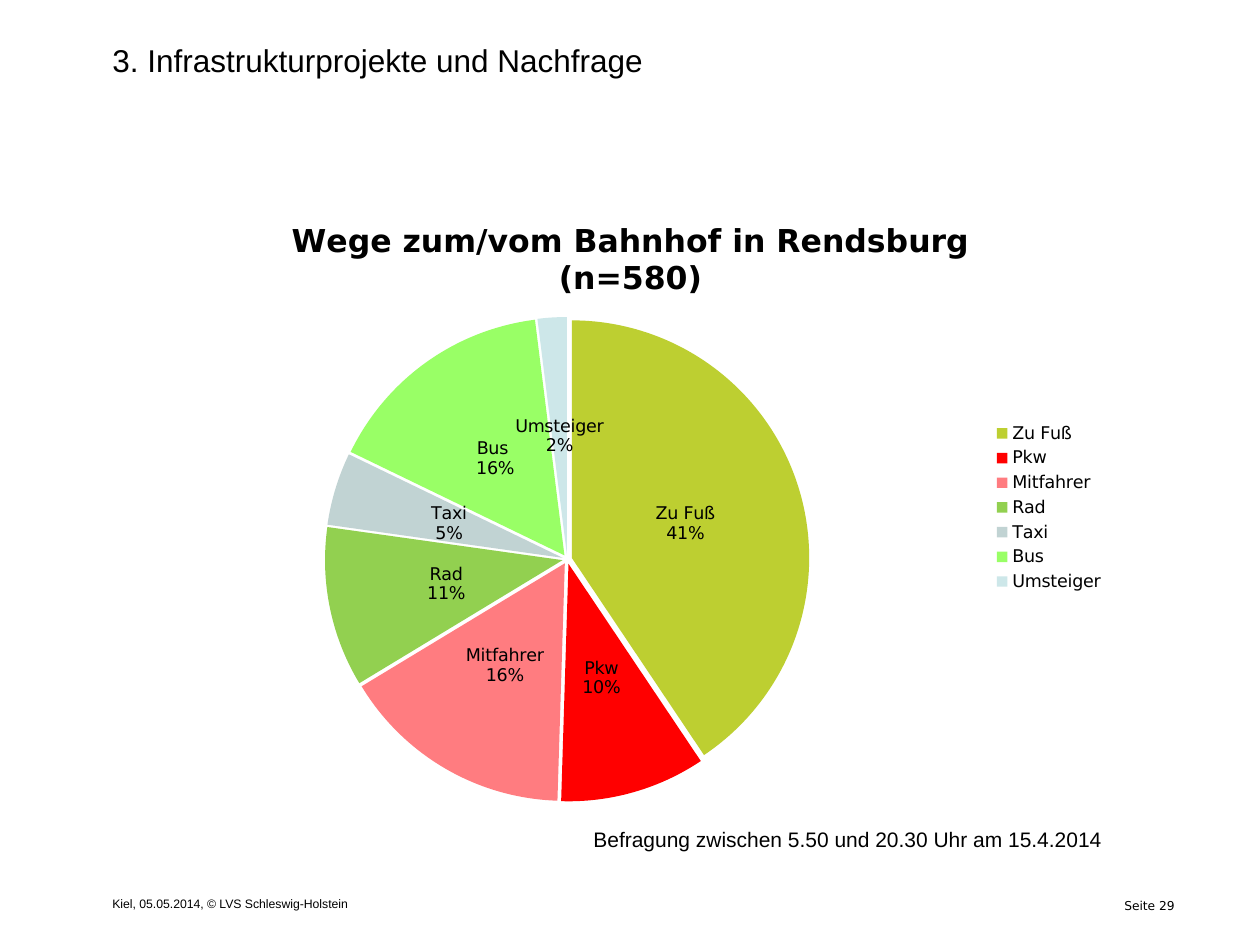
from lxml import etree
from pptx import Presentation
from pptx.chart.data import CategoryChartData
from pptx.dml.color import RGBColor
from pptx.enum.chart import XL_CHART_TYPE, XL_LABEL_POSITION, XL_LEGEND_POSITION
from pptx.enum.text import PP_ALIGN
from pptx.oxml.ns import qn
from pptx.util import Pt

PIE = XL_CHART_TYPE.PIE
CENTER = XL_LABEL_POSITION.CENTER
SIDE = XL_LEGEND_POSITION.RIGHT
LEFT, RIGHT = PP_ALIGN.LEFT, PP_ALIGN.RIGHT
SCALE = 914400 // 126
BLACK = "000000"
SANS, DEJA = "Arial", "DejaVu Sans"

TEXTS = [
    ("3. Infrastrukturprojekte und Nachfrage", (100, 35, 678, 42), 18, SANS, LEFT),
    ("Befragung zwischen 5.50 und 20.30 Uhr am 15.4.2014", (581, 820, 665, 38), 12, SANS, LEFT),
    ("Kiel, 05.05.2014, © LVS Schleswig-Holstein", (100, 890, 481, 24), 7, SANS, LEFT),
    ("Seite 29", (116, 892, 1071, 21), 7, DEJA, RIGHT),
]
TITLE = "Wege zum/vom Bahnhof in Rendsburg (n=580)"
SLICES = [
    ("Zu Fuß", 41, "BDCF31"),
    ("Pkw", 10, "FF0000"),
    ("Mitfahrer", 16, "FF7C80"),
    ("Rad", 11, "92D050"),
    ("Taxi", 5, "C1D3D3"),
    ("Bus ", 16, "99FF66"),
    ("Umsteiger", 2, "CDE7E9"),
]
FRAME = (144, 195, 973, 625)
PLOT = (325, 317, 485, 485)


def px(nums):
    return [n * SCALE for n in nums]


def color(code):
    return RGBColor.from_string(code)


def style(font, size, name, bold=False):
    font.size, font.name, font.bold = Pt(size), name, bold
    font.color.rgb = color(BLACK)


def add_text(slide, text, box, size, name, align):
    frame = slide.shapes.add_textbox(*px(box)).text_frame
    frame.word_wrap = True
    par = frame.paragraphs[0]
    par.alignment = align
    run = par.add_run()
    run.text = text
    style(run.font, size, name)


def place_plot(chart):
    area = chart._chartSpace.find(".//" + qn("c:plotArea"))
    for old in area.findall(qn("c:layout")):
        area.remove(old)
    layout = etree.Element(qn("c:layout"))
    area.insert(0, layout)
    manual = etree.SubElement(layout, qn("c:manualLayout"))
    left, top, width, height = FRAME
    x, y, w, h = PLOT
    parts = [
        ("layoutTarget", "inner"), ("xMode", "edge"), ("yMode", "edge"),
        ("x", round((x - left) / width, 3)), ("y", round((y - top) / height, 3)),
        ("w", round(w / width, 3)), ("h", round(h / height, 3)),
    ]
    for tag, val in parts:
        etree.SubElement(manual, qn("c:" + tag)).set("val", str(val))


def add_pie(slide):
    names, vals, fills = zip(*SLICES)
    data = CategoryChartData()
    data.categories = names
    data.add_series("Series 1", vals)
    chart = slide.shapes.add_chart(PIE, *px(FRAME), data).chart
    style(chart.font, 10, DEJA)

    chart.has_title = True
    run = chart.chart_title.text_frame.paragraphs[0].add_run()
    run.text = TITLE
    style(run.font, 18, DEJA, True)
    chart.chart_title.include_in_layout = False

    chart.has_legend = True
    chart.legend.position = SIDE
    chart.legend.include_in_layout = False
    style(chart.legend.font, 10, DEJA)

    plot = chart.plots[0]
    plot.vary_by_categories = True
    plot.has_data_labels = True
    labels = plot.data_labels
    labels.show_category_name = labels.show_percentage = True
    labels.show_value = False
    labels.number_format, labels.number_format_is_linked = "0%", False
    labels.position = CENTER
    style(labels.font, 10, DEJA)
    sep = etree.Element(qn("c:separator"))
    sep.text = "\n"
    labels._element.find(qn("c:showBubbleSize")).addnext(sep)

    series = plot.series[0]
    for i, fill in enumerate(fills):
        look = series.points[i].format
        look.fill.solid()
        look.fill.fore_color.rgb = color(fill)
        look.line.fill.background()
    burst = etree.Element(qn("c:explosion"))
    burst.set("val", "2")
    series._element.find(qn("c:dPt")).addprevious(burst)
    place_plot(chart)


def main():
    """Build the slide on station access in Rendsburg."""
    deck = Presentation()
    deck.slide_width, deck.slide_height = px((1260, 945))
    slide = deck.slides.add_slide(deck.slide_layouts[6])
    add_pie(slide)
    for item in TEXTS:
        add_text(slide, *item)
    deck.save("out.pptx")


if __name__ == "__main__":
    main()
